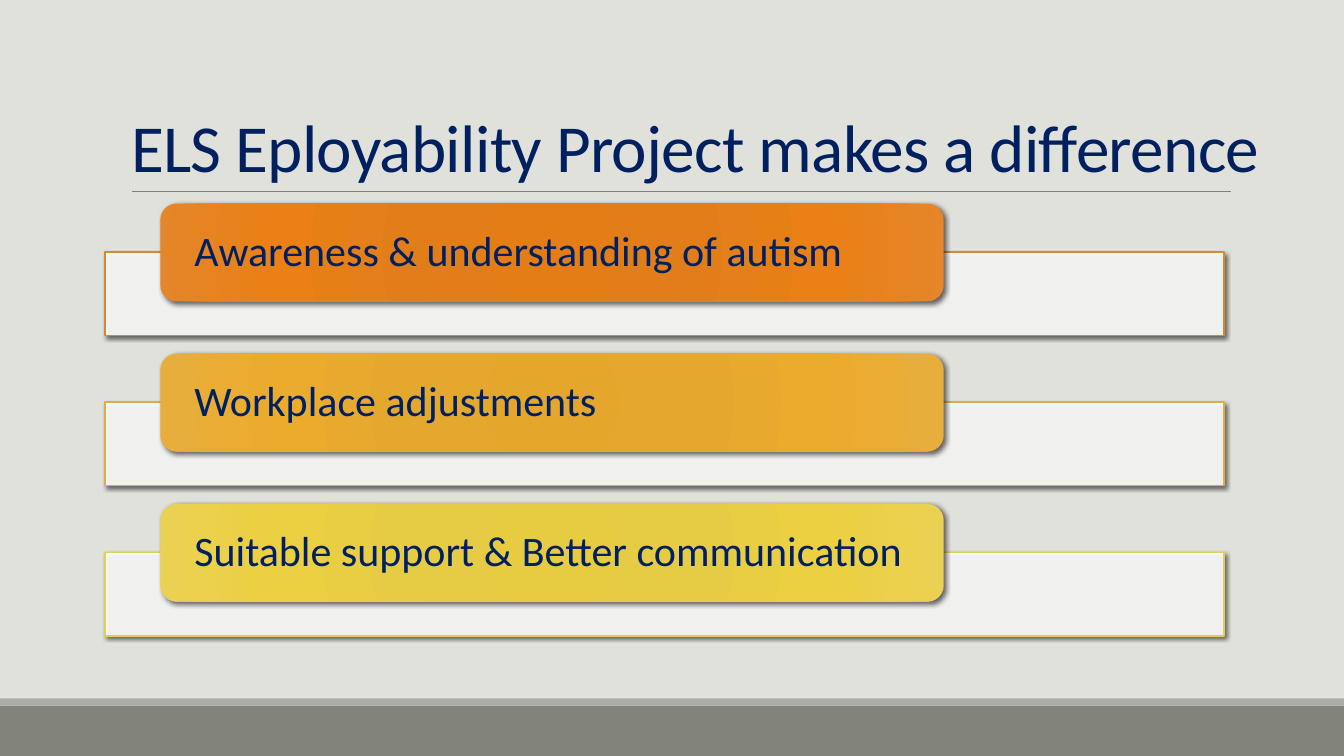
from dataclasses import dataclass

from pptx import Presentation
from pptx.dml.color import RGBColor
from pptx.enum.shapes import MSO_CONNECTOR, MSO_SHAPE
from pptx.enum.text import MSO_ANCHOR, MSO_AUTO_SIZE, PP_ALIGN
from pptx.oxml import parse_xml
from pptx.oxml.ns import nsdecls, qn
from pptx.util import Inches, Pt


@dataclass(frozen=True)
class Theme:
    background: str = "E1E1DB"
    footer: str = "82847C"
    footer_edge: str = "ACADA8"
    rule: str = "808080"
    ink: str = "002060"
    bar: str = "FFFFFF"
    font: str = "Calibri"
    title_size: int = 48
    label_size: int = 30


THEME = Theme()

# Label, bar outline, gradient colours from the centre outwards
BENEFITS = [
    ("Awareness & understanding of autism", "DB8631",
     ("E47D16", "E27E1A", "EA8016", "E48629")),
    ("Workplace adjustments", "DFAC45",
     ("E5A72B", "E4A82F", "EBAB2C", "E7AE3E")),
    ("Suitable support & Better communication", "E3CC5A",
     ("E7CB41", "E6CB45", "ECD042", "EAD153")),
]
GRADIENT_STOPS = (0, 34, 70, 100)
PITCH = 1.49


def add_block(kind, left, top, width, height, color=None, shadow_blur=None):
    block = slide.shapes.add_shape(
        kind, Inches(left), Inches(top), Inches(width), Inches(height))
    block.line.fill.background()
    block.shadow.inherit = False
    if color:
        block.fill.solid()
        block.fill.fore_color.rgb = RGBColor.from_string(color)
    if shadow_blur:
        block.element.spPr.find(qn("a:effectLst")).append(parse_xml(
            f'<a:outerShdw {nsdecls("a")} blurRad="{Pt(shadow_blur)}" dist="{Pt(2)}" '
            'dir="2700000" algn="br" rotWithShape="0"><a:srgbClr val="000000">'
            '<a:alpha val="60000"/></a:srgbClr></a:outerShdw>'))
    return block


def write_text(frame, text, size, frame_format, line_spacing):
    for name, value in frame_format.items():
        setattr(frame, name, value)
    paragraph = frame.paragraphs[0]
    paragraph.alignment = PP_ALIGN.LEFT
    paragraph.line_spacing = line_spacing
    run = paragraph.add_run()
    run.text = text
    for name, value in {"name": THEME.font, "size": Pt(size)}.items():
        setattr(run.font, name, value)
    run.font.color.rgb = RGBColor.from_string(THEME.ink)
    return run


presentation = Presentation()
presentation.slide_width = Inches(13.33)
presentation.slide_height = Inches(7.5)
slide = presentation.slides.add_slide(presentation.slide_layouts[5])
slide.background.fill.solid()
slide.background.fill.fore_color.rgb = RGBColor.from_string(THEME.background)

# Footer band
add_block(MSO_SHAPE.RECTANGLE, 0, 7, 13.33, 0.5, THEME.footer)
add_block(MSO_SHAPE.RECTANGLE, 0, 6.93, 13.33, 0.07, THEME.footer_edge)

# Rule under the title
title_rule = slide.shapes.add_connector(
    MSO_CONNECTOR.STRAIGHT, Inches(1.31), Inches(1.9), Inches(12.21), Inches(1.9))
title_rule.line.color.rgb = RGBColor.from_string(THEME.rule)
title_rule.line.width = Pt(0.5)
title_rule.element.spPr.append(parse_xml(f'<a:effectLst {nsdecls("a")}/>'))

# Title
title = slide.shapes.title
title_place = {"left": 1.2, "top": 0.31, "width": 11.51, "height": 1.59}
for name, value in title_place.items():
    setattr(title, name, Inches(value))
title_format = {
    "word_wrap": True,
    "auto_size": MSO_AUTO_SIZE.NONE,
    "vertical_anchor": MSO_ANCHOR.BOTTOM,
}
title_run = write_text(title.text_frame, "ELS Eployability Project makes a difference",
                       THEME.title_size, title_format, 0.85)
title_run.font._element.set("spc", "-50")

# Benefits: a translucent bar with a gradient label over its top edge
label_format = {
    "word_wrap": True,
    "vertical_anchor": MSO_ANCHOR.MIDDLE,
    "margin_left": Inches(0.29),
    "margin_right": Inches(0.29),
    "margin_top": 0,
    "margin_bottom": 0,
}
for row, (benefit, outline, colors) in enumerate(BENEFITS):
    offset = row * PITCH
    bar = add_block(MSO_SHAPE.RECTANGLE, 1.04, 2.5 + offset, 11.1, 0.83, THEME.bar, 3)
    bar.line.color.rgb = RGBColor.from_string(outline)
    bar.line.width = Pt(1)
    bar.element.spPr.find(qn("a:solidFill"))[0].append(
        parse_xml(f'<a:alpha {nsdecls("a")} val="90000"/>'))

    label = add_block(MSO_SHAPE.ROUNDED_RECTANGLE, 1.59, 2.02 + offset, 7.77, 0.97,
                      shadow_blur=3.5)
    stops = "".join(
        f'<a:gs pos="{stop * 1000}"><a:srgbClr val="{color}"/></a:gs>'
        for stop, color in zip(GRADIENT_STOPS, colors))
    label.element.spPr.find(qn("a:prstGeom")).addnext(parse_xml(
        f'<a:gradFill {nsdecls("a")} rotWithShape="1"><a:gsLst>{stops}</a:gsLst>'
        '<a:path path="circle"><a:fillToRect l="100000" t="100000" r="100000" '
        'b="100000"/></a:path></a:gradFill>'))
    write_text(label.text_frame, benefit, THEME.label_size, label_format, 0.9)

presentation.save("out.pptx")
